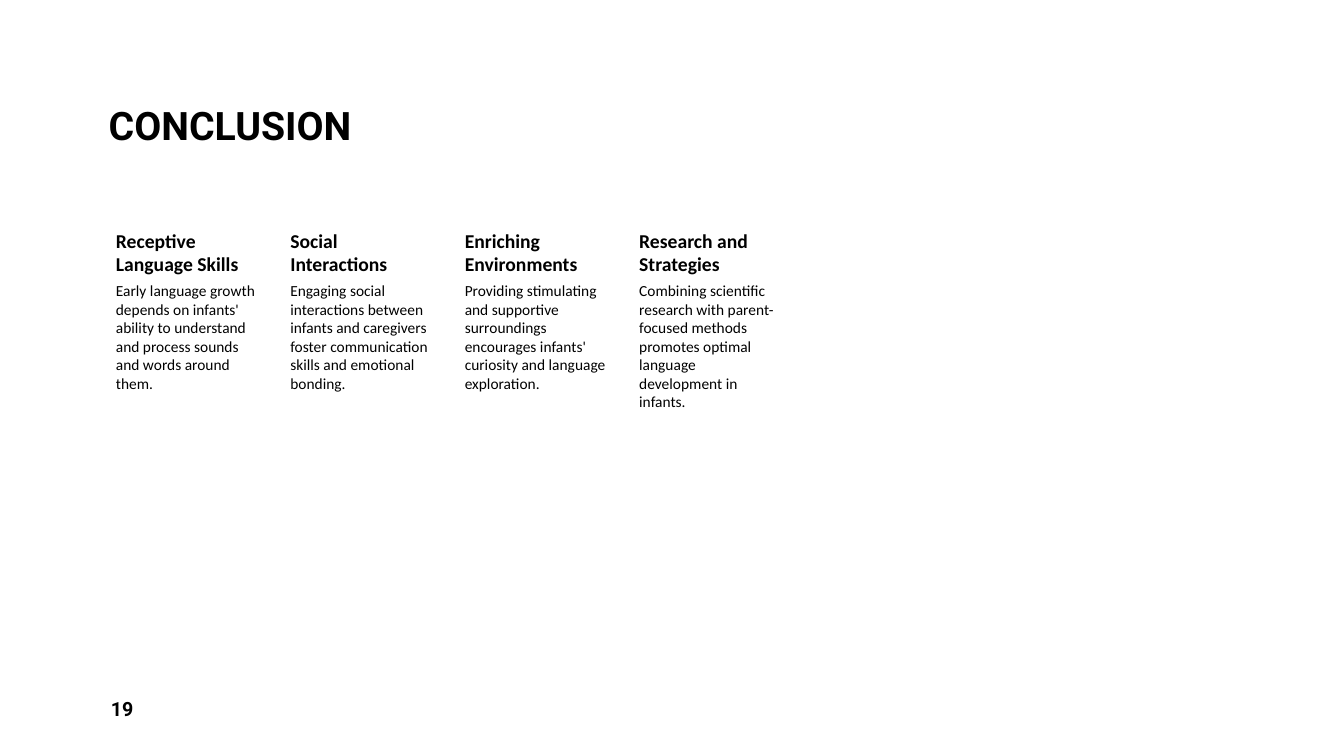
from dataclasses import dataclass

from pptx import Presentation
from pptx.dml.color import RGBColor
from pptx.enum.text import MSO_ANCHOR
from pptx.util import Inches, Pt

TOP, MIDDLE, BOTTOM = MSO_ANCHOR.TOP, MSO_ANCHOR.MIDDLE, MSO_ANCHOR.BOTTOM


@dataclass(frozen=True)
class Theme:
    """Colours, fonts and type sizes of the slide."""
    ink: RGBColor = RGBColor(0, 0, 0)
    paper: RGBColor = RGBColor(255, 255, 255)
    display: str = "Roboto"
    body: str = "Calibri"
    title_size: int = 28
    heading_size: int = 14
    body_size: int = 11


THEME = Theme()
TEXT_INSETS = (0.1, 0.05, 0.1, 0.05)
COLUMN_INSETS = (0.15, 0.02, 0.02, 0.02)

TAKEAWAYS = [
    ("Receptive Language Skills",
     "Early language growth depends on infants' ability to understand and "
     "process sounds and words around them."),
    ("Social Interactions",
     "Engaging social interactions between infants and caregivers foster "
     "communication skills and emotional bonding."),
    ("Enriching Environments",
     "Providing stimulating and supportive surroundings encourages infants' "
     "curiosity and language exploration."),
    ("Research and Strategies",
     "Combining scientific research with parent-focused methods promotes "
     "optimal language development in infants."),
]


def add_text(slide, box, text, font, size, bold=False, anchor=TOP,
             insets=TEXT_INSETS):
    """Add a wrapped one-paragraph text box and return its paragraph."""
    tf = slide.shapes.add_textbox(*map(Inches, box)).text_frame
    tf.word_wrap = True
    tf.vertical_anchor = anchor
    (tf.margin_left, tf.margin_top,
     tf.margin_right, tf.margin_bottom) = map(Inches, insets)
    p = tf.paragraphs[0]
    p.text = text
    f = p.runs[0].font
    f.name, f.size, f.bold = font, Pt(size), bold
    f.color.rgb = THEME.ink
    return p


def add_title(slide, box, text):
    """Add the slide title at the bottom of its box."""
    p = add_text(slide, box, text, THEME.display, THEME.title_size, True, BOTTOM)
    p.line_spacing = 0.9


def add_takeaways(slide, box, items, gap=0.16, heading_height=0.52):
    """Lay out equal columns, each with a heading above its body text."""
    left, top, width, height = box
    col_width = (width - gap * (len(items) - 1)) / len(items)
    for i, (heading, body) in enumerate(items):
        x = left + i * (col_width + gap)
        add_text(slide, (x, top, col_width, heading_height), heading,
                 THEME.body, THEME.heading_size, True, insets=COLUMN_INSETS)
        add_text(slide, (x, top + heading_height, col_width, height - heading_height),
                 body, THEME.body, THEME.body_size, insets=COLUMN_INSETS)


def add_page_number(slide, box, number):
    """Add the page number in the footer."""
    add_text(slide, box, str(number), THEME.display, THEME.heading_size, True, MIDDLE)


def main():
    """Build and save the conclusion slide."""
    prs = Presentation()
    prs.slide_width, prs.slide_height = Inches(13.33), Inches(7.5)
    slide = prs.slides.add_slide(prs.slide_layouts[6])
    slide.background.fill.solid()
    slide.background.fill.fore_color.rgb = THEME.paper
    add_title(slide, (0.98, 0.08, 11.38, 1.45), "CONCLUSION")
    add_takeaways(slide, (1, 2.25, 6.76, 3.92), TAKEAWAYS)
    add_page_number(slide, (1, 6.83, 2.92, 0.4), 19)
    prs.save("out.pptx")


if __name__ == "__main__":
    main()
